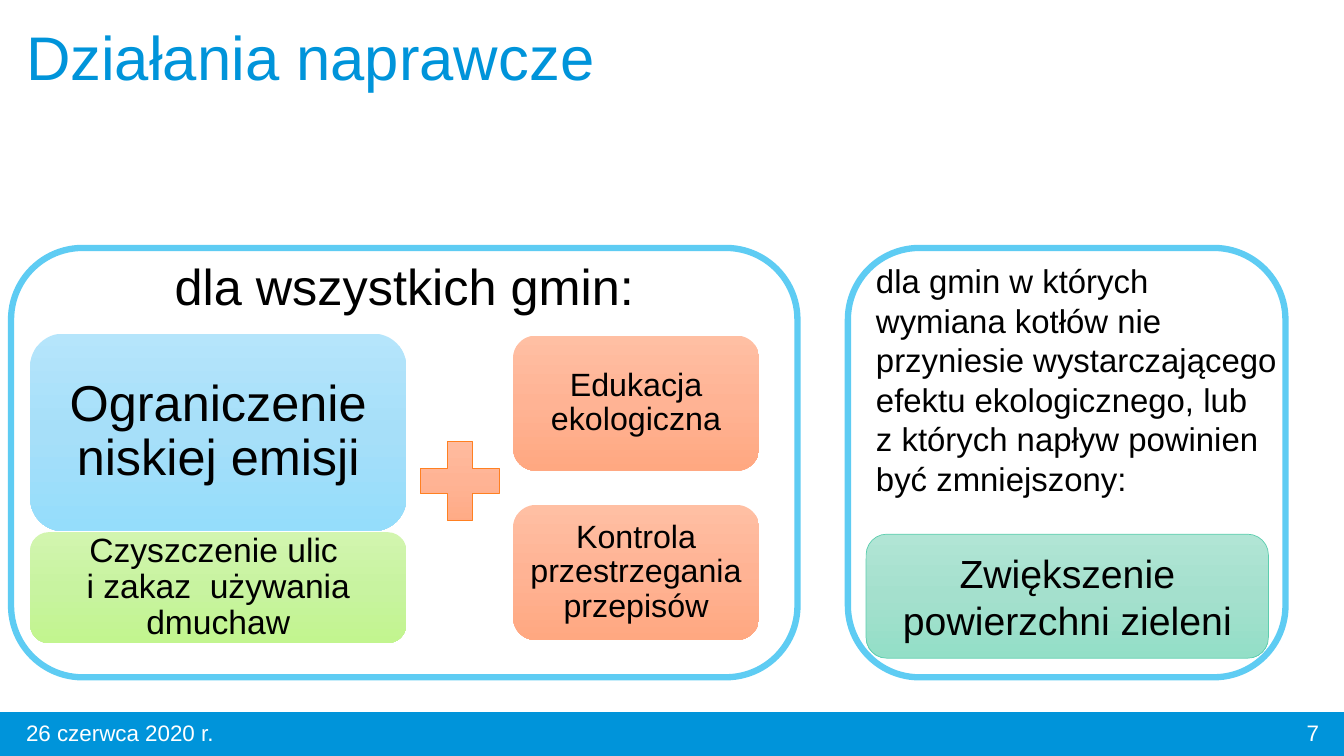
import copy
import pptx
import pptx.dml.color
import pptx.enum.shapes
import pptx.enum.text
import pptx.oxml.ns
import pptx.util

Inches = pptx.util.Inches
Pt = pptx.util.Pt
SHAPE = pptx.enum.shapes.MSO_SHAPE
ALIGN = pptx.enum.text.PP_ALIGN
ANCHOR = pptx.enum.text.MSO_ANCHOR

BRAND, FRAME, BLACK, WHITE = "0094DA", "5ECCF3", "000000", "FFFFFF"
BLUE = ("B5E5FB", "A6DFF9", "95DDFB")
GREEN = ("D2F5AF", "C8F3A0", "C2F58F")
ORANGE = ("FFBFA3", "FFB394", "FFA881")
MINT = ("B1E5D5", "A4E0CD", "93DFC7")


def rgb(hex_colour):
    return pptx.dml.color.RGBColor.from_string(hex_colour)


def paint_gradient(shape, colours):
    """Fill from top to bottom with three evenly spaced colours."""
    shape.fill.gradient()
    shape.fill.gradient_angle = 270
    stop_list = shape.element.spPr.find(".//" + pptx.oxml.ns.qn("a:gsLst"))
    stop_list.insert(1, copy.deepcopy(stop_list[0]))
    for index, (stop, colour) in enumerate(zip(shape.fill.gradient_stops, colours)):
        stop.position = index / 2
        stop.color.rgb = rgb(colour)


def add_figure(slide, kind, box, fill, line=None, width=0.5):
    figure = slide.shapes.add_shape(kind, *map(Inches, box))
    figure.shadow.inherit = False
    if isinstance(fill, tuple):
        paint_gradient(figure, fill)
    else:
        figure.fill.solid()
        figure.fill.fore_color.rgb = rgb(fill)
    if line:
        figure.line.color.rgb = rgb(line)
        figure.line.width = Pt(width)
    else:
        figure.line.fill.background()
    return figure


def write(shape, paragraphs, size, colour=BLACK, align=ALIGN.LEFT,
          anchor=ANCHOR.TOP, spacing=None, inset=None):
    """Each paragraph is a list of lines parted by line breaks."""
    frame = shape.text_frame
    frame.word_wrap = True
    frame.vertical_anchor = anchor
    if inset is not None:
        frame.margin_left = frame.margin_right = Inches(inset)
        frame.margin_top = frame.margin_bottom = Inches(inset)
    for index, lines in enumerate(paragraphs):
        paragraph = frame.add_paragraph() if index else frame.paragraphs[0]
        paragraph.alignment = align
        if spacing:
            paragraph.line_spacing = spacing
        for number, line in enumerate(lines):
            if number:
                paragraph.add_line_break()
            run = paragraph.add_run()
            run.text = line
            run.font.name = "Arial"
            run.font.size = Pt(size)
            run.font.color.rgb = rgb(colour)


def add_label(slide, box, paragraphs, size, **style):
    write(slide.shapes.add_textbox(*map(Inches, box)), paragraphs, size, **style)


def add_card(slide, box, lines, size, fill, inset=0.1, spacing=0.9, line=None):
    card = add_figure(slide, SHAPE.ROUNDED_RECTANGLE, box, fill, line)
    write(card, [lines], size, align=ALIGN.CENTER, anchor=ANCHOR.MIDDLE,
          spacing=spacing, inset=inset)


def add_panel(slide, box):
    add_figure(slide, SHAPE.ROUNDED_RECTANGLE, box, WHITE, FRAME, 4.5)


def add_footer(slide, box):
    left, top, width, height = box
    add_figure(slide, SHAPE.RECTANGLE, box, BRAND, BRAND, 1)
    style = dict(colour=WHITE, anchor=ANCHOR.MIDDLE)
    add_label(slide, (left + 0.16, top, 4, 0.4), [["26 czerwca 2020 r."]], 16, **style)
    add_label(slide, (left + width - 3.15, top, 3, 0.4), [["7"]], 16,
              align=ALIGN.RIGHT, **style)


def add_all_communes(slide, box):
    left, top, width, height = box
    add_panel(slide, box)
    add_label(slide, (left + 0.19, top + 0.02, width - 0.38, 0.71),
              [["dla wszystkich gmin:"]], 36, align=ALIGN.CENTER)
    # Main measures
    main_left = left + 0.19
    add_card(slide, (main_left, top + 0.85, 3.73, 1.96),
             ["Ograniczenie niskiej emisji"], 36, BLUE, inset=0.15)
    add_card(slide, (main_left, top + 2.82, 3.73, 1.1),
             ["Czyszczenie ulic ", "i zakaz  używania dmuchaw"], 24, GREEN)
    # Supporting measures
    add_figure(slide, SHAPE.MATH_PLUS, (left + 3.92, top + 1.78, 1.06, 1.06),
               ORANGE, "FF8021")
    for row, support in enumerate(["Edukacja ekologiczna",
                                   "Kontrola przestrzegania przepisów"]):
        add_card(slide, (left + 4.98, top + 0.87 + row * 1.68, 2.44, 1.34),
                 [support], 23, ORANGE)


def add_selected_communes(slide, box):
    left, top, width, height = box
    add_panel(slide, box)
    add_card(slide, (left + 0.18, top + 2.84, 3.99, 1.23),
             ["Zwiększenie powierzchni zieleni"], 28, MINT, spacing=None, line="5DCEAF")
    add_label(slide, (left + 0.18, top + 0.08, 4.26, 2.47),
              [["dla gmin w których wymiana kotłów nie przyniesie "
                "wystarczającego efektu ekologicznego, lub"],
               ["z których napływ powinien być zmniejszony:"]], 23.5)


def main():
    deck = pptx.Presentation()
    deck.slide_width, deck.slide_height = Inches(13.33), Inches(7.5)
    slide = deck.slides.add_slide(deck.slide_layouts[6])
    add_label(slide, (0.16, 0.22, 10.3, 1.5), [["Działania naprawcze"]], 44,
              colour=BRAND, spacing=0.9)
    add_all_communes(slide, (0.11, 2.46, 7.8, 4.26))
    add_selected_communes(slide, (8.41, 2.46, 4.34, 4.26))
    add_footer(slide, (0, 7.07, 13.33, 0.43))
    deck.save("out.pptx")


if __name__ == "__main__":
    main()
